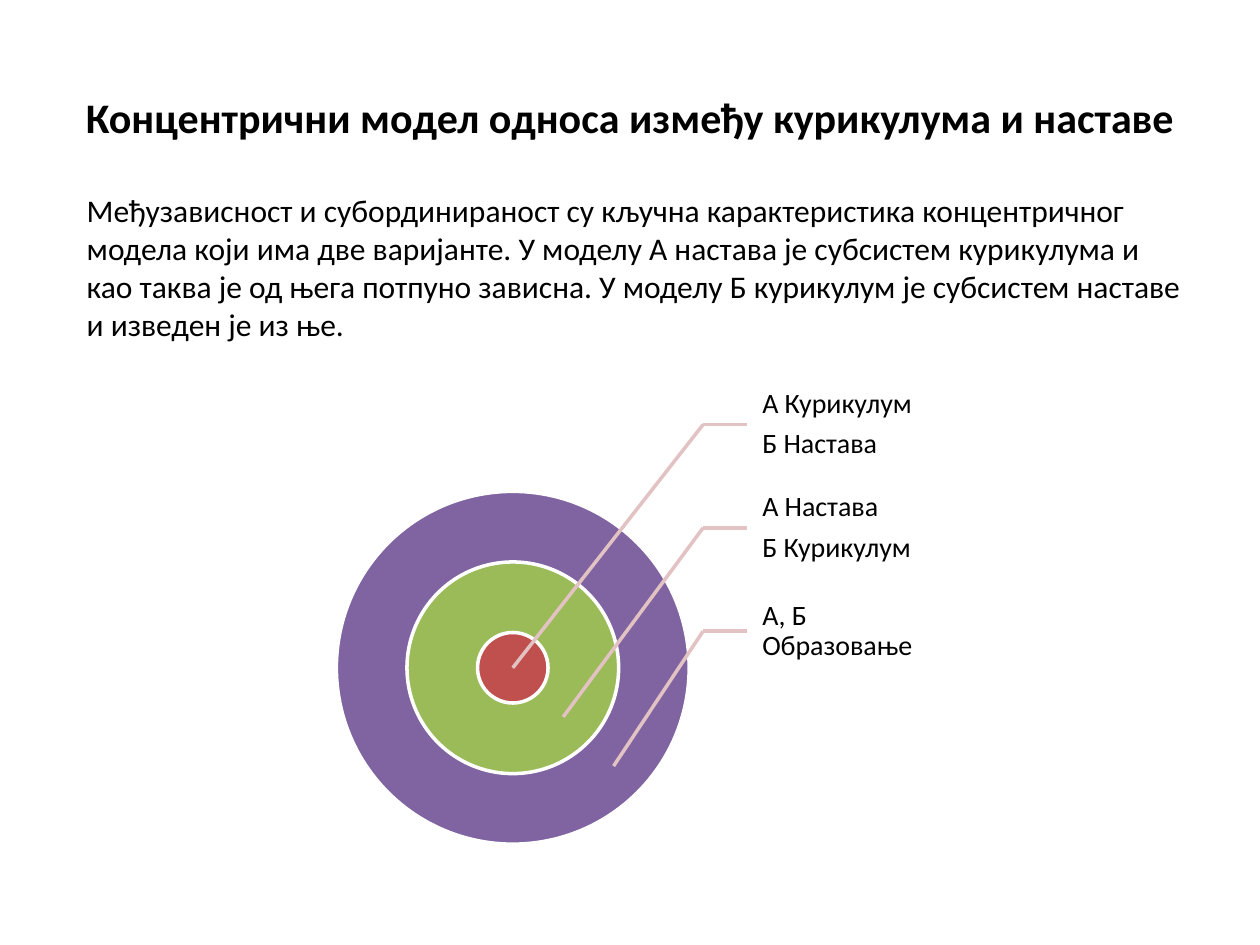
from dataclasses import dataclass
from lxml import etree
from pptx import Presentation
from pptx.dml.color import RGBColor as Color
from pptx.enum.shapes import MSO_CONNECTOR as Conn, MSO_SHAPE as Kind
from pptx.enum.text import MSO_ANCHOR as Anchor, PP_ALIGN as Align
from pptx.oxml.ns import qn
from pptx.util import Inches, Pt

TITLE = "Концентрични модел односа између курикулума и наставе"
BODY = (
    "Међузависност и субординираност су кључна карактеристика концентричног "
    "модела који има две варијанте. У моделу А настава је субсистем курикулума и "
    "као таква је од њега потпуно зависна. У моделу Б курикулум је субсистем "
    "наставе и изведен је из ње."
)
RINGS = [(2.8, "8064A2"), (1.68, "9BBB59"), (0.56, "C0504D")]
LABELS = [
    (["А Курикулум", "Б Настава"], (4.07, 5.3)),
    (["А Настава", "Б Курикулум"], (4.47, 5.69)),
    (["А, Б Образовање"], (4.87, 6.08)),
]
CENTER = (4.07, 5.3)
LEFT, TOP, WIDE, HIGH = 5.93, 2.96, 1.4, 0.82
BEND = 5.58


@dataclass
class Theme:
    font: str = "Calibri"
    ink: str = "000000"
    edge: str = "FFFFFF"
    lead: str = "E2C2C2"
    head: int = 24
    body: int = 18
    label: int = 16
    line: int = 2


theme = Theme()


def add_text(slide, lines, box, size, bold=False, align=Align.LEFT,
             anchor=Anchor.TOP, inset=(0.1, 0.05, 0.1, 0.05), space=1, after=0):
    shape = slide.shapes.add_textbox(*map(Inches, box))
    frame = shape.text_frame
    frame.word_wrap = True
    frame.vertical_anchor = anchor
    (frame.margin_left, frame.margin_top,
     frame.margin_right, frame.margin_bottom) = map(Inches, inset)
    frame.text = "\n".join(lines)
    for par in frame.paragraphs:
        par.alignment = align
        par.line_spacing = space
        par.space_after = Pt(after)
        font = par.runs[0].font
        font.name, font.size, font.bold = theme.font, Pt(size), bold
        font.color.rgb = Color.from_string(theme.ink)
    return shape


def add_ring(slide, size, fill):
    left, top = (mid - size / 2 for mid in CENTER)
    ring = slide.shapes.add_shape(Kind.OVAL, *map(Inches, (left, top, size, size)))
    ring.shadow.inherit = False
    ring.fill.solid()
    ring.fill.fore_color.rgb = Color.from_string(fill)
    ring.line.color.rgb = Color.from_string(theme.edge)
    ring.line.width = Pt(theme.line)


def add_line(slide, start, end):
    line = slide.shapes.add_connector(Conn.STRAIGHT, *map(Inches, start + end))
    line.line.color.rgb = Color.from_string(theme.lead)
    line.line.width = Pt(theme.line)
    etree.SubElement(line._element.spPr, qn("a:effectLst"))
    return line


def main():
    deck = Presentation()
    deck.slide_width, deck.slide_height = Inches(10), Inches(7.5)
    slide = deck.slides.add_slide(deck.slide_layouts[6])
    add_text(slide, [TITLE], (0.5, 0.3, 9, 1.25), theme.head, bold=True,
             align=Align.CENTER, anchor=Anchor.MIDDLE)
    for size, fill in RINGS:
        add_ring(slide, size, fill)
    for row, (lines, tip) in enumerate(LABELS):
        top = TOP + row * HIGH
        mid = top + HIGH / 2
        label = add_text(slide, lines, (LEFT, top, WIDE, HIGH), theme.label,
                         anchor=Anchor.MIDDLE, inset=(0.12, 0.02, 0.02, 0.02),
                         space=0.9, after=0.35 * theme.label)
        add_line(slide, (BEND, mid), (LEFT, mid)).end_connect(label, 1)
        add_line(slide, (BEND, mid), tip)
    add_text(slide, [BODY], (0.59, 1.47, 8.9, 1.31), theme.body)
    deck.save("out.pptx")


if __name__ == "__main__":
    main()
